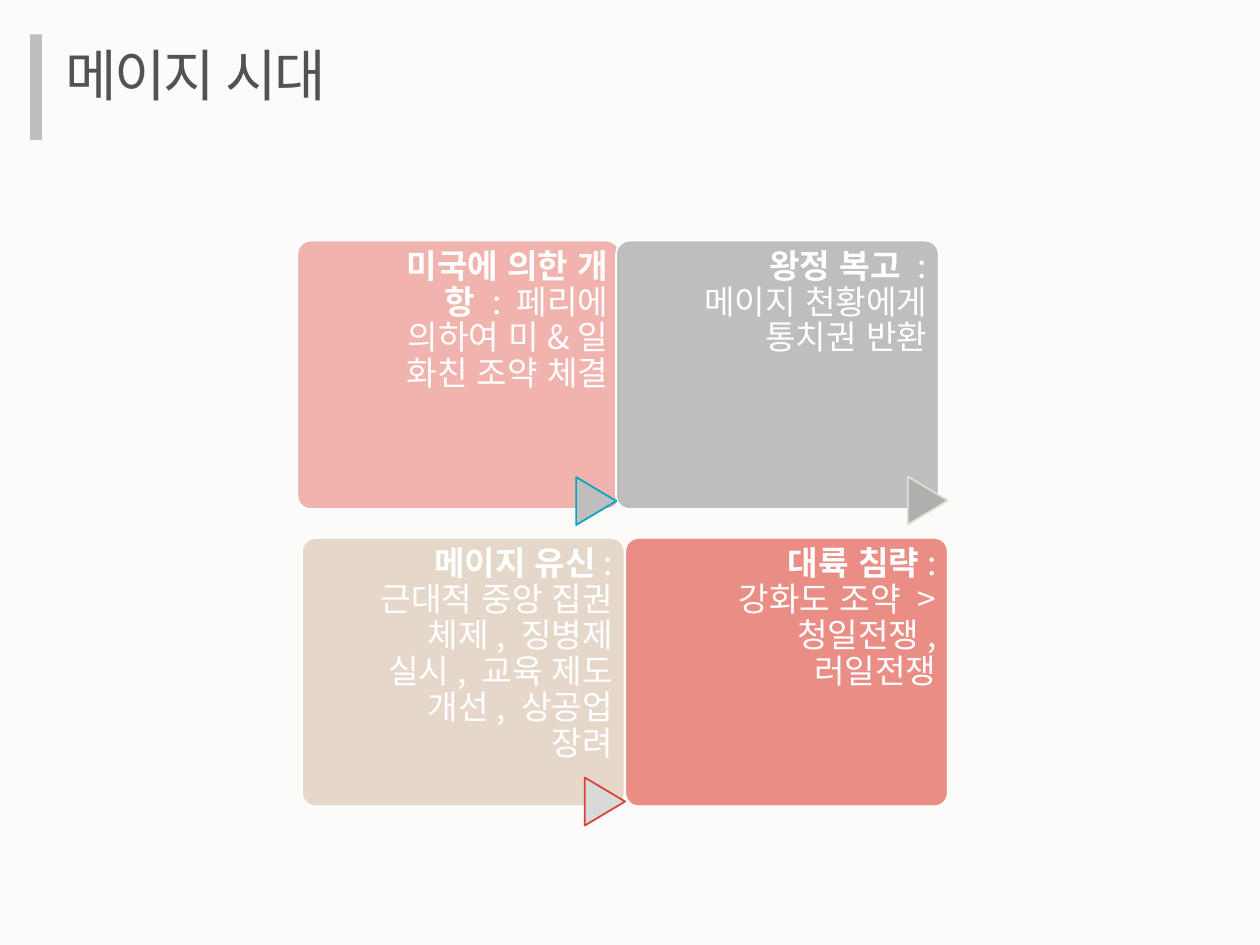
from dataclasses import dataclass
from typing import Optional

from lxml.etree import SubElement
from pptx import Presentation
from pptx.dml.color import RGBColor
from pptx.enum.lang import MSO_LANGUAGE_ID as LANG
from pptx.enum.shapes import MSO_SHAPE as SHAPE
from pptx.enum.text import MSO_ANCHOR as ANCHOR, MSO_AUTO_SIZE as AUTO, PP_ALIGN as ALIGN
from pptx.oxml.ns import qn
from pptx.util import Pt

FONT = "Noto Sans CJK KR"
CARD_W, CARD_H = 184.3, 153.4
RADIUS = 7.67
ARROW_W, ARROW_H = 27.4, 23
TOP_ROW, BOTTOM_ROW = 137.5, 307.4


@dataclass
class Card:
    left: float
    top: float
    fill: str
    heading: str
    body: str
    opacity: Optional[int] = None


@dataclass
class Arrow:
    left: float
    top: float
    fill: str
    line: str


CARDS = [
    Card(169.9, TOP_ROW, "F0B3AD", "미국에 의한 개항 ", ": 페리에 의하여 미&일 화친 조약 체결"),
    Card(352.1, TOP_ROW, "BFBDBD", "왕정 복고 ", ": 메이지 천황에게 통치권 반환"),
    Card(172.6, BOTTOM_ROW, "996633", "메이지 유신",
         ": 근대적 중앙 집권 체제, 징병제 실시, 교육 제도 개선, 상공업 장려", 23),
    Card(357.3, BOTTOM_ROW, "E98D85", "대륙 침략", ": 강화도 조약 > 청일전쟁, 러일전쟁"),
]
ARROWS = [
    Arrow(327, 274.8, "BFBDBD", "00A7C2"),
    Arrow(516.5, 274.5, "B1AEAE", "E2DED3"),
    Arrow(332, 446.5, "D9D9D9", "DA4133"),
]


def rgb(value: str) -> RGBColor:
    return RGBColor.from_string(value)


def apply(target, formats: dict) -> None:
    for name, value in formats.items():
        setattr(target, name, value)


def add_run(p, text: str, size: float, color: str, bold: bool = False):
    r = p.add_run()
    r.text = text
    apply(r.font, {"name": FONT, "size": Pt(size), "bold": bold, "language_id": LANG.KOREAN})
    r.font.color.rgb = rgb(color)
    SubElement(r.font._element, qn("a:ea"), typeface=FONT)
    return r


def add_block(s, kind, left: float, top: float, width: float, height: float,
              fill: str, line: Optional[str] = None):
    sp = s.shapes.add_shape(kind, Pt(left), Pt(top), Pt(width), Pt(height))
    sp.shadow.inherit = False
    sp.fill.solid()
    sp.fill.fore_color.rgb = rgb(fill)
    if line:
        sp.line.color.rgb = rgb(line)
        sp.line.width = Pt(1)
    else:
        sp.line.fill.background()
    return sp


def add_title(s, text: str) -> None:
    sp = s.shapes.title
    apply(sp, {"left": Pt(30.2), "top": Pt(19.4), "width": Pt(178), "height": Pt(46)})
    tf = sp.text_frame
    apply(tf, {"word_wrap": True, "auto_size": AUTO.NONE, "vertical_anchor": ANCHOR.MIDDLE,
               "margin_top": 0, "margin_bottom": 0})
    p = tf.paragraphs[0]
    p.alignment = ALIGN.LEFT
    r = add_run(p, text, 32, "525252")
    r.font._element.set("spc", "-150")


def add_card(s, card: Card) -> None:
    sp = add_block(s, SHAPE.ROUNDED_RECTANGLE, card.left, card.top, CARD_W, CARD_H,
                   card.fill, "FFFFFF")
    sp.adjustments[0] = RADIUS / CARD_H
    if card.opacity is not None:
        color = sp.fill._xPr.find(qn("a:solidFill"))[0]
        SubElement(color, qn("a:alpha"), val=str(card.opacity * 1000))
    tf = sp.text_frame
    apply(tf, {"word_wrap": True, "vertical_anchor": ANCHOR.TOP, "margin_left": Pt(32.3),
               "margin_right": Pt(4.3), "margin_top": Pt(2.8), "margin_bottom": 0})
    p = tf.paragraphs[0]
    apply(p, {"alignment": ALIGN.RIGHT, "line_spacing": 0.9})
    add_run(p, card.heading, 19, "FFFFFF", bold=True)
    add_run(p, card.body, 19, "FFFFFF")


def add_arrow(s, arrow: Arrow) -> None:
    sp = add_block(s, SHAPE.FLOWCHART_EXTRACT, arrow.left, arrow.top, ARROW_W, ARROW_H,
                   arrow.fill, arrow.line)
    sp.rotation = 90


def main() -> None:
    prs = Presentation()
    apply(prs, {"slide_width": Pt(720), "slide_height": Pt(540)})
    s = prs.slides.add_slide(prs.slide_layouts[5])
    s.background.fill.solid()
    s.background.fill.fore_color.rgb = rgb("FCFBFA")
    add_title(s, "메이지 시대")
    add_block(s, SHAPE.RECTANGLE, 17.2, 19.6, 6.8, 60.4, "BFBDBD")
    for card in CARDS:
        add_card(s, card)
    for arrow in ARROWS:
        add_arrow(s, arrow)
    prs.save("out.pptx")


if __name__ == "__main__":
    main()
